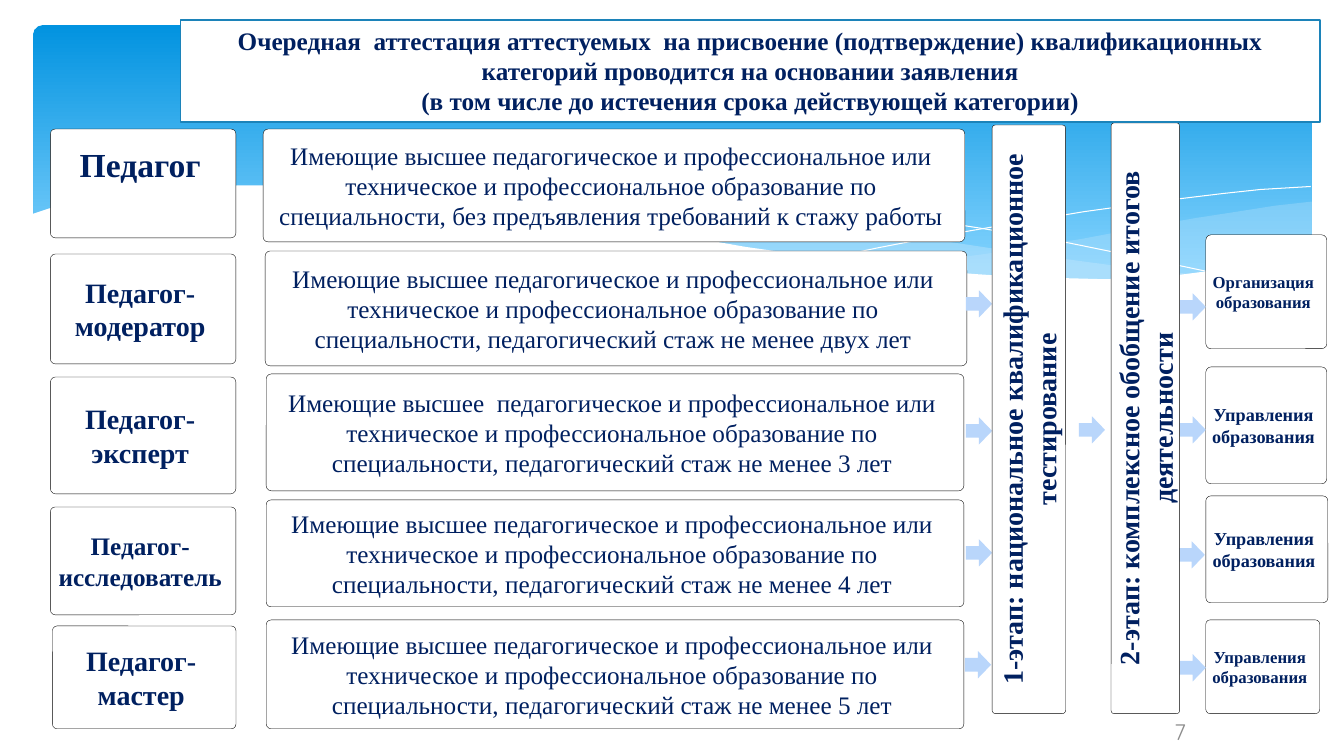
from pptx import Presentation
from pptx.dml.color import RGBColor
from pptx.enum.shapes import MSO_SHAPE
from pptx.enum.text import MSO_ANCHOR, PP_ALIGN
from pptx.oxml.ns import qn
from pptx.util import Pt
from lxml.etree import SubElement

PX = 9144  # 100 px to the inch
WHITE = RGBColor(0xFF, 0xFF, 0xFF)
BLACK = RGBColor(0x00, 0x00, 0x00)
NAVY = RGBColor(0x00, 0x20, 0x60)
SKY_TOP = RGBColor(0x02, 0x93, 0xE0)
SKY_BOTTOM = RGBColor(0x83, 0xD3, 0xFE)
HAZE = RGBColor(0xC6, 0xE7, 0xFC)
ARROW_BLUE = RGBColor(0xB9, 0xD6, 0xFB)
TITLE_EDGE = RGBColor(0x1C, 0x83, 0xB9)
GREY = RGBColor(0x8C, 0x8C, 0x8C)
SERIF = "Times New Roman"

# Wave points, measured from the top left corner of the banner
RIGHT_HAZE = [
    (1268, 175), (1232, 179), (1194, 185), (1155, 191), (1114, 198), (1040, 212), (972, 223),
    (908, 232), (849, 240), (888, 244), (925, 247), (960, 250), (1008, 252), (1052, 253),
    (1093, 252), (1130, 249), (1163, 245), (1195, 240), (1224, 234), (1251, 227), (1268, 222)]
LONG_HAZE = [
    (1157, 248), (1121, 244), (1083, 240), (1001, 229), (908, 215), (806, 197), (765, 189),
    (726, 183), (688, 178), (653, 173), (619, 169), (556, 164), (499, 161), (449, 160),
    (404, 162), (366, 164), (349, 166), (398, 171), (450, 178), (506, 186), (566, 197),
    (621, 207), (722, 223), (791, 233), (854, 241), (912, 247), (965, 250), (1028, 253),
    (1085, 253), (1123, 252)]
LONG_LINE = [
    (379, 170), (405, 167), (437, 164), (483, 162), (544, 162), (592, 164), (647, 167),
    (709, 172), (778, 179), (853, 188), (937, 201), (1027, 216), (1125, 236), (1177, 247)]
RIGHT_LINE = [
    (785, 232), (837, 221), (894, 210), (964, 198), (1042, 185), (1122, 174), (1180, 167),
    (1217, 163), (1267, 160)]
WHITE_WAVE = [
    (1270, 221), (1246, 228), (1221, 234), (1194, 240), (1165, 244), (1134, 248), (1101, 250),
    (1064, 252), (1025, 251), (982, 250), (936, 247), (885, 243), (830, 237), (771, 229),
    (707, 220), (638, 208), (563, 195), (488, 182), (420, 172), (357, 165), (300, 161),
    (249, 159), (202, 159), (161, 160), (125, 162), (94, 166), (68, 170), (46, 174),
    (29, 178), (15, 182), (0, 187), (-2, 188), (-2, 304), (1270, 304)]

LEVELS = [  # name, size, place of the name box, place of the requirement box
    ("Педагог", 24, (50, 128, 184, 108), (261, 128, 696, 112)),
    ("Педагог-модератор", 20, (50, 252, 184, 109), (263, 249, 696, 114)),
    ("Педагог-эксперт", 20, (50, 374, 184, 116), (264, 371, 692, 116)),
    ("Педагог-исследователь", 18, (50, 503, 184, 107), (264, 496, 692, 106)),
    ("Педагог-мастер", 20, (52, 621, 182, 102), (264, 615, 692, 108)),
]
EDUCATION = ("педагогическое и профессиональное или техническое и профессиональное "
             "образование по специальности, ")
REQUIREMENTS = [
    "Имеющие высшее " + EDUCATION + "без предъявления требований к стажу работы",
    "Имеющие высшее " + EDUCATION + "педагогический стаж не менее двух лет",
    "Имеющие высшее  " + EDUCATION + "педагогический стаж не менее 3 лет",
    "Имеющие высшее " + EDUCATION + "педагогический стаж не менее 4 лет",
    "Имеющие высшее " + EDUCATION + "педагогический стаж не менее 5 лет",
]
STAGES = [
    ("1-этап: национальное квалификационное тестирование", (984, 124, 73, 584)),
    ("2-этап: комплексное обобщение итогов деятельности", (1102, 122, 68, 586)),
]
BODIES = [
    ("Организация образования", 12, (1196, 233, 120, 113)),
    ("Управления образования", 13, (1196, 364, 120, 116)),
    ("Управления образования", 13, (1196, 492, 121, 106)),
    ("Управления образования", 12, (1196, 615, 113, 93)),
]
ARROWS = [(958, 288), (958, 414), (958, 535), (957, 646), (1070, 413),
          (1170, 291), (1170, 413), (1169, 537), (1170, 649)]
TITLE = [
    "Очередная  аттестация аттестуемых  на присвоение (подтверждение) "
    "квалификационных категорий проводится на основании заявления",
    "(в том числе до истечения срока действующей категории)",
]


def paint(shape, fill=None, edge=None, width=0.25, alpha=None):
    shape.shadow.inherit = False
    if fill is None:
        shape.fill.background()
    else:
        shape.fill.solid()
        shape.fill.fore_color.rgb = fill
    if alpha is not None:
        colour = shape._element.spPr.find(qn("a:solidFill")).find(qn("a:srgbClr"))
        SubElement(colour, qn("a:alpha")).set("val", str(alpha * 1000))
    if edge is None:
        shape.line.fill.background()
    else:
        shape.line.color.rgb = edge
        shape.line.width = Pt(width)


def add_preset(page, kind, box):
    return page.shapes.add_shape(kind, *(length * PX for length in box))


def write(shape, lines, size, bold=False, colour=NAVY, font=SERIF,
          anchor=MSO_ANCHOR.MIDDLE, insets=(10, 5, 10, 5)):
    frame = shape.text_frame
    frame.word_wrap = True
    frame.vertical_anchor = anchor
    (frame.margin_left, frame.margin_top,
     frame.margin_right, frame.margin_bottom) = (inset * PX for inset in insets)
    for index, line in enumerate(lines):
        para = frame.add_paragraph() if index else frame.paragraphs[0]
        para.alignment = PP_ALIGN.CENTER
        span = para.add_run()
        span.text = line
        span.font.size = Pt(size)
        span.font.bold = bold
        span.font.name = font
        span.font.color.rgb = colour


def add_wave(page, left, top, points, closed=True, **look):
    (first_x, first_y), *rest = [(left + x, top + y) for x, y in points]
    builder = page.shapes.build_freeform(first_x, first_y, scale=PX)
    builder.add_line_segments(rest, close=closed)
    paint(builder.convert_to_shape(), **look)


def add_banner(page, box):
    left, top = box[:2]
    banner = add_preset(page, MSO_SHAPE.ROUNDED_RECTANGLE, box)
    banner.adjustments[0] = 0.034
    paint(banner)
    banner.fill.gradient()
    banner.fill.gradient_angle = 270
    for stop, colour, position in zip(banner.fill.gradient_stops, (SKY_TOP, SKY_BOTTOM), (0, 0.9)):
        stop.color.rgb = colour
        stop.position = position
    add_wave(page, left, top, RIGHT_HAZE, fill=HAZE, alpha=29)
    add_wave(page, left, top, LONG_HAZE, fill=HAZE, alpha=40)
    for points in (LONG_LINE, RIGHT_LINE):
        add_wave(page, left, top, points, closed=False, edge=WHITE, width=0)
    add_wave(page, left, top, WHITE_WAVE, fill=WHITE)


def add_card(page, box, text, size, bold=True, bottom=5):
    card = add_preset(page, MSO_SHAPE.ROUNDED_RECTANGLE, box)
    card.adjustments[0] = 0.045
    paint(card, fill=WHITE, edge=BLACK)
    write(card, [text], size, bold, insets=(4, 5, 10, bottom))
    return card


def add_level(page, level, requirement):
    name, size, name_box, requirement_box = level
    add_card(page, name_box, name, size, bottom=43 if name == "Педагог" else 5)
    add_card(page, requirement_box, requirement, 18, bold=False)


def add_stage(page, text, box):
    card = add_card(page, box, text, 20)
    card.text_frame._txBody.bodyPr.set("vert", "vert270")


def add_title(page, box):
    title = add_preset(page, MSO_SHAPE.RECTANGLE, box)
    paint(title, fill=WHITE, edge=TITLE_EDGE, width=1.25)
    write(title, TITLE, 18, bold=True, anchor=MSO_ANCHOR.TOP)


def add_page_number(page, box):
    number = page.shapes.add_textbox(*(length * PX for length in box))
    write(number, ["7"], 16, colour=GREY, font="Quicksand")


def main():
    deck = Presentation()
    deck.slide_width, deck.slide_height = 1333 * PX, 750 * PX
    page = deck.slides.add_slide(deck.slide_layouts[6])
    add_banner(page, (33, 25, 1268, 270))
    for level, requirement in zip(LEVELS, REQUIREMENTS):
        add_level(page, level, requirement)
    for text, size, box in BODIES:
        add_card(page, box, text, size)
    for left, top in ARROWS:
        paint(add_preset(page, MSO_SHAPE.RIGHT_ARROW, (left, top, 26, 27)), fill=ARROW_BLUE)
    for text, box in STAGES:
        add_stage(page, text, box)
    add_page_number(page, (1015, 706, 311, 40))
    add_title(page, (179, 20, 1130, 101))
    deck.save("out.pptx")


if __name__ == "__main__":
    main()
